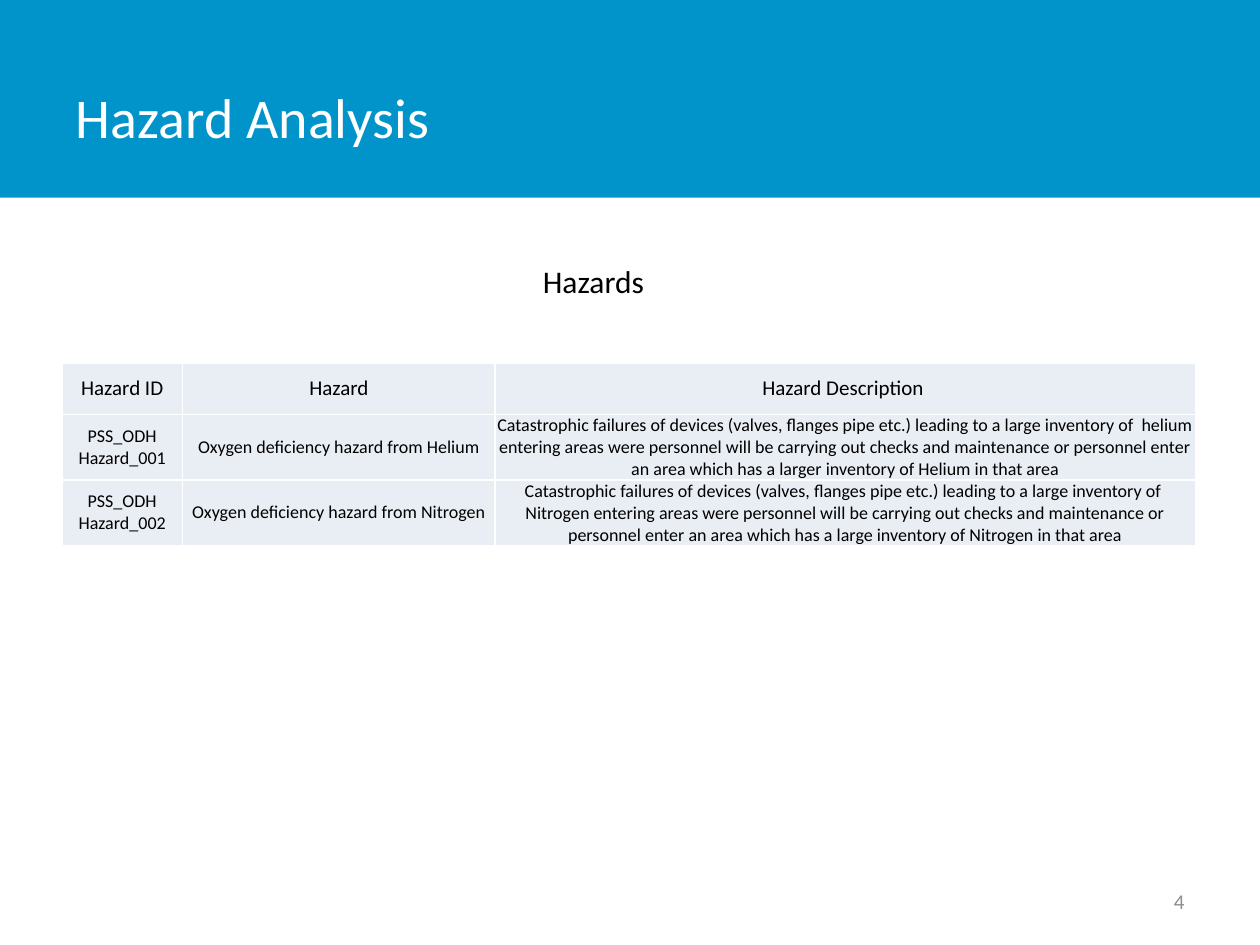
"""Build the hazard analysis slide."""
from lxml import etree
from pptx import Presentation
from pptx.dml.color import RGBColor
from pptx.enum import shapes, text
from pptx.oxml import ns
from pptx.util import Inches, Pt

COLORS = {"band": "0094CA", "cell": "E9EDF4", "white": "FFFFFF",
          "black": "000000", "gray": "8C8C8C"}
FONT = "Calibri"
COLUMN_WIDTHS = (0.96, 2.48, 5.56)
ROW_HEIGHTS = (0.41, 0.52, 0.52)
HEADER_SIZE, BODY_SIZE = 12, 10.3
HAZARDS = (
    ("Hazard ID", "Hazard", "Hazard Description "),
    ("PSS_ODH Hazard_001", "Oxygen deficiency hazard from Helium",
     "Catastrophic failures of devices (valves, flanges pipe etc.) leading to "
     "a large inventory of  helium entering areas were personnel will be "
     "carrying out checks and maintenance or personnel enter an area which "
     "has a larger inventory of Helium in that area"),
    ("PSS_ODH Hazard_002", "Oxygen deficiency hazard from Nitrogen",
     "Catastrophic failures of devices (valves, flanges pipe etc.) leading to "
     "a large inventory of  Nitrogen entering areas were personnel will be "
     "carrying out checks and maintenance or personnel enter an area which "
     "has a large inventory of Nitrogen in that area"),
)


def color(name):
    """Return the named colour."""
    return RGBColor.from_string(COLORS[name])


def write(frame, content, size, color_name, align=text.PP_ALIGN.LEFT):
    """Fill a text frame with one formatted paragraph."""
    frame.text = content
    paragraph = frame.paragraphs[0]
    paragraph.alignment = align
    for run in paragraph.runs:
        run.font.name = FONT
        run.font.size = Pt(size)
        run.font.bold = False
        run.font.color.rgb = color(color_name)


def add_title(slide, content):
    """Place the title over a full-width band."""
    title = slide.shapes.title
    title.left, title.top = Inches(0.5), Inches(0.3)
    title.width, title.height = Inches(7.81), Inches(1.25)
    write(title.text_frame, content, 32, "white")
    title.text_frame.vertical_anchor = text.MSO_ANCHOR.MIDDLE
    band = slide.shapes.add_shape(shapes.MSO_SHAPE.RECTANGLE, 0, 0,
                                  Inches(10), Inches(1.57))
    band.shadow.inherit = False
    band.fill.solid()
    band.fill.fore_color.rgb = color("band")
    band.line.fill.background()
    title.element.addprevious(band.element)


def add_label(slide, box, content, size, color_name, wrap=True,
              align=text.PP_ALIGN.LEFT, anchor=text.MSO_ANCHOR.TOP):
    """Add a text box holding one line."""
    label = slide.shapes.add_textbox(*map(Inches, box))
    frame = label.text_frame
    frame.word_wrap = wrap
    frame.vertical_anchor = anchor
    write(frame, content, size, color_name, align)
    if not wrap:
        frame.auto_size = text.MSO_AUTO_SIZE.SHAPE_TO_FIT_TEXT


def set_borders(cell):
    """Give a cell thin white borders, placed before its fill."""
    properties = cell._tc.get_or_add_tcPr()
    for position, side in enumerate(("lnL", "lnR", "lnT", "lnB")):
        line = etree.Element(ns.qn(f"a:{side}"), w=str(Pt(1)))
        fill = etree.SubElement(line, ns.qn("a:solidFill"))
        etree.SubElement(fill, ns.qn("a:srgbClr"), val=COLORS["white"])
        properties.insert(position, line)


def format_cell(cell, content, size):
    """Write and style one table cell."""
    cell.margin_left = cell.margin_right = 0
    cell.margin_top = cell.margin_bottom = 0
    cell.vertical_anchor = text.MSO_ANCHOR.MIDDLE
    cell.fill.solid()
    cell.fill.fore_color.rgb = color("cell")
    write(cell.text_frame, content, size, "black", text.PP_ALIGN.CENTER)
    set_borders(cell)


def add_hazard_table(slide):
    """Add the table of hazards."""
    table = slide.shapes.add_table(
        len(ROW_HEIGHTS), len(COLUMN_WIDTHS), Inches(0.49), Inches(2.88),
        Inches(sum(COLUMN_WIDTHS)), Inches(sum(ROW_HEIGHTS))).table
    for column, width in zip(table.columns, COLUMN_WIDTHS):
        column.width = Inches(width)
    for index, (row, height) in enumerate(zip(table.rows, ROW_HEIGHTS)):
        row.height = Inches(height)
        size = BODY_SIZE if index else HEADER_SIZE
        for cell, content in zip(row.cells, HAZARDS[index]):
            format_cell(cell, content, size)


def main():
    """Build and save the presentation."""
    presentation = Presentation()
    presentation.slide_width = Inches(10)
    presentation.slide_height = Inches(7.5)
    slide = presentation.slides.add_slide(presentation.slide_layouts[5])
    add_title(slide, "Hazard Analysis")
    add_label(slide, (7.17, 6.95, 2.33, 0.4), "4", 12, "gray",
              align=text.PP_ALIGN.RIGHT, anchor=text.MSO_ANCHOR.MIDDLE)
    add_hazard_table(slide)
    add_label(slide, (4.21, 2.03, 1.01, 0.4), "Hazards", 18, "black",
              wrap=False)
    presentation.save("out.pptx")


if __name__ == "__main__":
    main()
